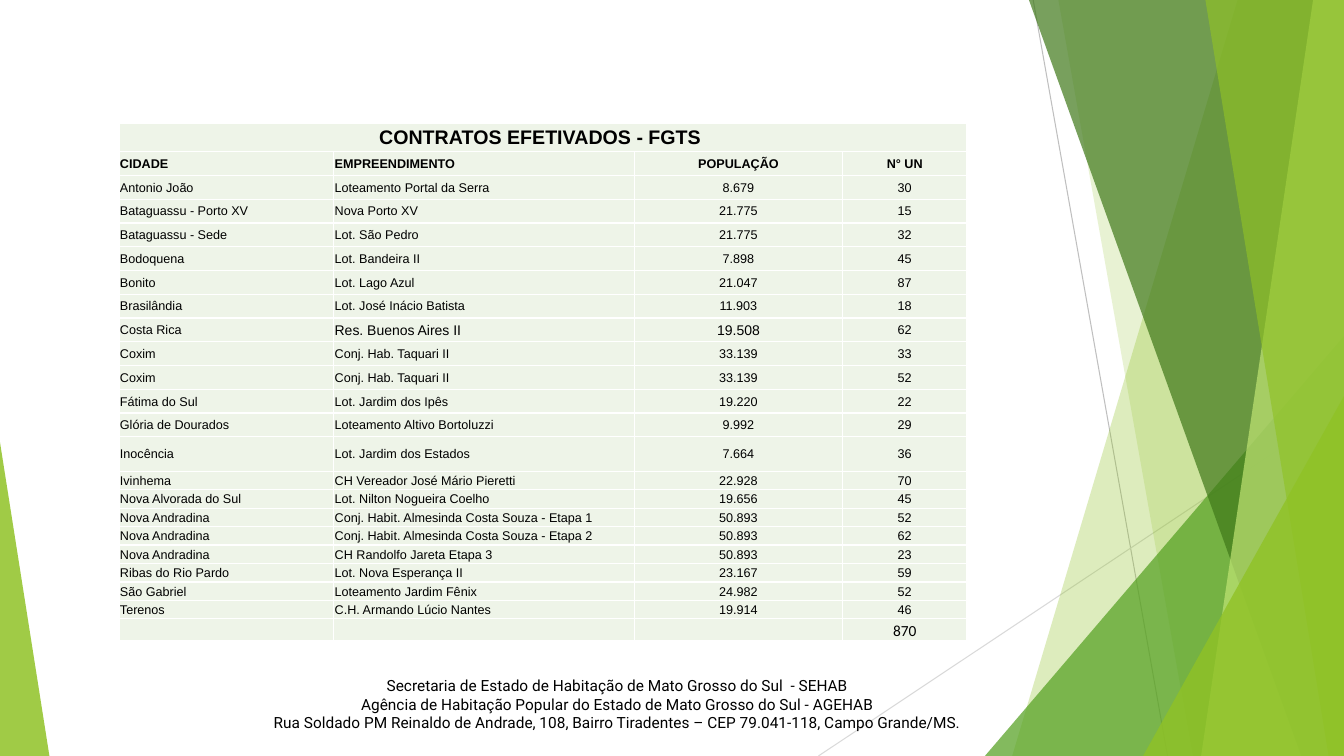
from dataclasses import dataclass
from lxml.etree import SubElement
from pptx import Presentation
from pptx.dml.color import RGBColor
from pptx.enum.shapes import MSO_CONNECTOR as Link, MSO_SHAPE as Form
from pptx.enum.text import MSO_ANCHOR as Anchor, MSO_AUTO_SIZE as Fit, PP_ALIGN as Align
from pptx.oxml.ns import qn
from pptx.util import Pt


@dataclass(frozen=True)
class Theme:
    black: str = "000000"
    white: str = "FFFFFF"
    cell: str = "EEF4E8"
    lime: str = "90C226"
    leaf: str = "54A021"
    dark: str = "3F7819"
    pale: str = "C0E474"
    gray: str = "BFBFBF"
    mist: str = "D9D9D9"
    face: str = "Arial"
    foot_face: str = "Roboto"
    sum_face: str = "Calibri"
    title: float = 14
    body: float = 9
    large: float = 10
    note: float = 11


THEME = Theme()
WIDE, HIGH = 960, 540
COLS = [153.4, 214.6, 149, 88.6]
ROWS = [20] + [17] * 12 + [24.6] + [13.2] * 8 + [15.8]
HEADS = [
    ("CONTRATOS EFETIVADOS - FGTS ", "", "", ""),
    ("CIDADE", "EMPREENDIMENTO", "POPULAÇÃO", "N° UN"),
]
WORKS = [
    ("Antonio João", "Loteamento Portal da Serra", "8.679", "30"),
    ("Bataguassu - Porto XV", "Nova Porto XV", "21.775", "15"),
    ("Bataguassu - Sede", "Lot. São Pedro", "21.775", "32"),
    ("Bodoquena", "Lot. Bandeira II", "7.898", "45"),
    ("Bonito", "Lot. Lago Azul", "21.047", "87"),
    ("Brasilândia", "Lot. José Inácio Batista", "11.903", "18"),
    ("Costa Rica", "Res. Buenos Aires II", "19.508", "62"),
    ("Coxim", "Conj. Hab. Taquari II", "33.139", "33"),
    ("Coxim", "Conj. Hab. Taquari II", "33.139", "52"),
    ("Fátima do Sul", "Lot. Jardim dos Ipês", "19.220", "22"),
    ("Glória de Dourados", "Loteamento Altivo Bortoluzzi", "9.992", "29"),
    ("Inocência", "Lot. Jardim dos Estados", "7.664", "36"),
    ("Ivinhema", "CH Vereador José Mário Pieretti", "22.928", "70"),
    ("Nova Alvorada do Sul", "Lot. Nilton Nogueira Coelho", "19.656", "45"),
    ("Nova Andradina", "Conj. Habit. Almesinda Costa Souza - Etapa 1", "50.893", "52"),
    ("Nova Andradina", "Conj. Habit. Almesinda Costa Souza - Etapa 2", "50.893", "62"),
    ("Nova Andradina", "CH Randolfo Jareta Etapa 3", "50.893", "23"),
    ("Ribas do Rio Pardo", "Lot. Nova Esperança II", "23.167", "59"),
    ("São Gabriel", "Loteamento Jardim Fênix", "24.982", "52"),
    ("Terenos", "C.H. Armando Lúcio Nantes", "19.914", "46"),
]
TOTAL = ("", "", "", "870")
LARGE = ("Res. Buenos Aires II", "19.508")
FOOT = [
    "Secretaria de Estado de Habitação de Mato Grosso do Sul  - SEHAB",
    "Agência de Habitação Popular do Estado de Mato Grosso do Sul - AGEHAB",
    "Rua Soldado PM Reinaldo de Andrade, 108, Bairro Tiradentes – CEP 79.041-118, Campo Grande/MS.",
]


def rgb(code):
    return RGBColor.from_string(code)


def style(par, face, size, bold=False):
    for run in par.runs:
        font = run.font
        font.name, font.size, font.bold = face, Pt(size), bold
        font.color.rgb = rgb(THEME.black)


def tint(shape, color, alpha):
    """Fill without outline or shadow; alpha is opacity in percent."""
    shape.shadow.inherit = False
    shape.line.fill.background()
    shape.fill.solid()
    shape.fill.fore_color.rgb = rgb(color)
    code = shape.fill._xPr.find(qn("a:solidFill"))[0]
    SubElement(code, qn("a:alpha"), val=str(alpha * 1000))


def add_line(slide, start, end, color):
    line = slide.shapes.add_connector(Link.STRAIGHT, *map(Pt, start + end))
    line.line.color.rgb = rgb(color)
    line.line.width = Pt(0.75)
    SubElement(line._element.spPr, qn("a:effectLst"))


def add_band(slide, top, base, color, alpha):
    """Band from a slanted left edge to the right edge of the slide."""
    pen = slide.shapes.build_freeform(Pt(top), 0)
    pen.add_line_segments([(Pt(x), Pt(y)) for x, y in
                           [(WIDE, 0), (WIDE, HIGH), (base, HIGH)]])
    tint(pen.convert_to_shape(), color, alpha)


def add_peak(slide, left, wide, high, tip, color, alpha):
    """Triangle standing on the bottom edge, its tip at a share of its width."""
    peak = slide.shapes.add_shape(Form.ISOSCELES_TRIANGLE, Pt(left),
                                  Pt(HIGH - high), Pt(wide), Pt(high))
    peak.adjustments[0] = tip
    tint(peak, color, alpha)


def add_facets(slide):
    add_line(slide, (738, 0), (834, HIGH), THEME.gray)
    add_line(slide, (WIDE, 290), (584.6, HIGH), THEME.mist)
    add_band(slide, 884, 723, THEME.lime, 30)
    add_band(slide, 756, 852, THEME.lime, 20)
    add_peak(slide, 703.5, 256.5, 300, 1, THEME.leaf, 72)
    add_band(slide, 735, 929.5, THEME.dark, 70)
    add_band(slide, 938, 858, THEME.pale, 70)
    add_band(slide, 861, 949, THEME.lime, 65)
    add_peak(slide, 816.5, 143.5, 257, 1, THEME.lime, 80)
    add_peak(slide, 0, 35.3, 224, 0, THEME.lime, 85)


def set_cell(cell, text, face, size, bold, align, anchor):
    cell.margin_left = cell.margin_right = cell.margin_top = Pt(0.7)
    cell.margin_bottom = 0
    cell.vertical_anchor = anchor
    for side in ("lnL", "lnR", "lnT", "lnB"):
        edge = SubElement(cell._tc.get_or_add_tcPr(), qn("a:" + side), w=str(Pt(1)))
        SubElement(SubElement(edge, qn("a:solidFill")), qn("a:srgbClr"), val=THEME.white)
    cell.fill.solid()
    cell.fill.fore_color.rgb = rgb(THEME.cell)
    cell.text_frame.text = text
    par = cell.text_frame.paragraphs[0]
    par.alignment = align
    style(par, face, size, bold)
    if not text:
        SubElement(par._p, qn("a:endParaRPr"), sz=str(int(size * 100)))


def add_grid(slide):
    data = HEADS + WORKS + [TOTAL]
    grid = slide.shapes.add_table(len(data), len(COLS), Pt(85), Pt(88.3),
                                  Pt(sum(COLS)), Pt(sum(ROWS))).table
    grid.first_row = grid.horz_banding = False
    for col, wide in zip(grid.columns, COLS):
        col.width = Pt(wide)
    for row, high in zip(grid.rows, ROWS):
        row.height = Pt(high)
    last = len(data) - 1
    for r, line in enumerate(data):
        for c, text in enumerate(line):
            face, size, anchor = THEME.face, THEME.body, Anchor.MIDDLE
            if r == 0:
                size = THEME.title
            elif r == last and text:
                face, size, anchor = THEME.sum_face, THEME.note, Anchor.BOTTOM
            elif text in LARGE:
                size = THEME.large
            align = Align.CENTER if r == 0 or c > 1 else Align.LEFT
            set_cell(grid.cell(r, c), text, face, size, r < len(HEADS), align, anchor)
    grid.cell(0, 0).merge(grid.cell(0, len(COLS) - 1))


def add_foot(slide):
    frame = slide.shapes.add_textbox(Pt(153.4), Pt(479.5), Pt(575.3), Pt(60.5)).text_frame
    frame.word_wrap = False
    frame.auto_size = Fit.SHAPE_TO_FIT_TEXT
    frame.text = "\n".join(FOOT)
    for par in frame.paragraphs:
        par.alignment = Align.CENTER
        style(par, THEME.foot_face, THEME.note)


def main():
    deck = Presentation()
    deck.slide_width, deck.slide_height = Pt(WIDE), Pt(HIGH)
    slide = deck.slides.add_slide(deck.slide_layouts[6])
    add_facets(slide)
    add_foot(slide)
    add_grid(slide)
    deck.save("out.pptx")


if __name__ == "__main__":
    main()
